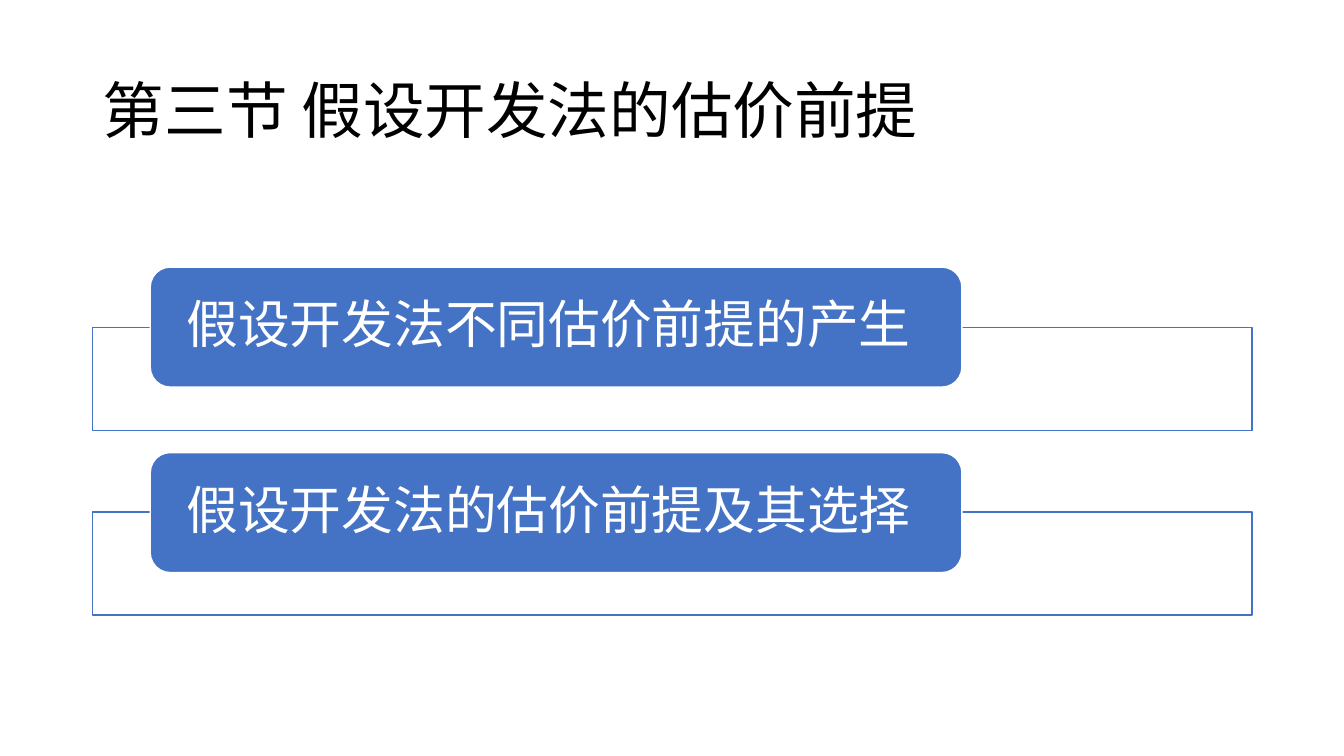
from dataclasses import dataclass

from lxml.etree import SubElement
from pptx import Presentation
from pptx.dml.color import RGBColor
from pptx.enum.shapes import MSO_SHAPE as Shape
from pptx.enum.text import MSO_ANCHOR as Anchor, PP_ALIGN as Align
from pptx.oxml.ns import qn
from pptx.util import Inches, Pt

FONT = "Noto Sans CJK SC"
COLORS = {"white": "FFFFFF", "black": "000000", "blue": "4472C4"}


@dataclass
class Topic:
    text: str
    frame_top: float
    label_top: float


TOPICS = [
    Topic("假设开发法不同估价前提的产生", 3.25, 2.65),
    Topic("假设开发法的估价前提及其选择", 5.08, 4.49),
]


def rgb(name: str) -> RGBColor:
    return RGBColor.from_string(COLORS[name])


def set_text(s, text: str, size: float, color: str, inset: float, inset_y: float) -> None:
    tf = s.text_frame
    tf.text = text
    tf.word_wrap = True
    tf.vertical_anchor = Anchor.MIDDLE
    tf.margin_left = tf.margin_right = Inches(inset)
    tf.margin_top = tf.margin_bottom = Inches(inset_y)
    p = tf.paragraphs[0]
    p.alignment = Align.LEFT
    p.line_spacing = 0.9
    r = p.runs[0]
    r.font.size = Pt(size)
    r.font.color.rgb = rgb(color)
    r.font.name = FONT
    SubElement(r.font._element, qn("a:ea"), typeface=FONT)


def add_box(slide, kind: Shape, left: float, top: float, width: float,
            height: float, fill: str, line: str):
    s = slide.shapes.add_shape(kind, Inches(left), Inches(top), Inches(width), Inches(height))
    s.shadow.inherit = False
    s.fill.solid()
    s.fill.fore_color.rgb = rgb(fill)
    s.line.color.rgb = rgb(line)
    s.line.width = Pt(1)
    return s


def add_topic(slide, topic: Topic) -> None:
    frame = add_box(slide, Shape.RECTANGLE, 0.92, topic.frame_top, 11.5, 1.02, "white", "blue")
    fill_color = frame.fill._xPr.find(qn("a:solidFill"))[0]
    SubElement(fill_color, qn("a:alpha"), val="90000")
    label = add_box(slide, Shape.ROUNDED_RECTANGLE, 1.49, topic.label_top, 8.05, 1.19,
                    "blue", "white")
    set_text(label, topic.text, 37, "white", 0.3, 0)


def main() -> None:
    prs = Presentation()
    prs.slide_width, prs.slide_height = Inches(13.33), Inches(7.5)
    slide = prs.slides.add_slide(prs.slide_layouts[5])
    title = slide.shapes.title
    title.left, title.top = Inches(0.92), Inches(0.4)
    title.width, title.height = Inches(11.5), Inches(1.45)
    set_text(title, "第三节 假设开发法的估价前提", 44, "black", 0.1, 0.05)
    for topic in TOPICS:
        add_topic(slide, topic)
    prs.save("out.pptx")


if __name__ == "__main__":
    main()
